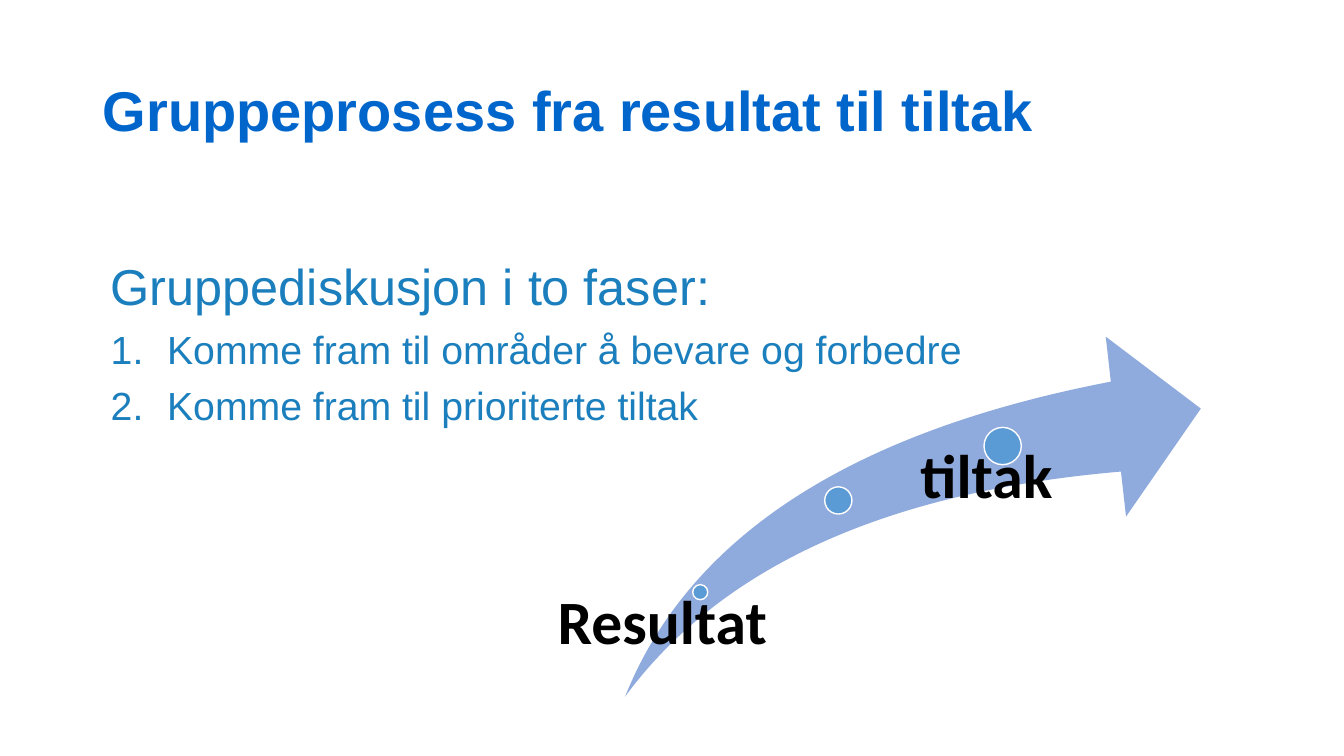
from lxml import etree
from pptx import Presentation
from pptx.dml.color import RGBColor
from pptx.enum.shapes import MSO_SHAPE
from pptx.enum.text import MSO_ANCHOR, PP_ALIGN
from pptx.oxml.ns import qn
from pptx.util import Inches, Pt

SWOOSH, OVAL = MSO_SHAPE.SWOOSH_ARROW, MSO_SHAPE.OVAL
LEFT = PP_ALIGN.LEFT
MIDDLE, TOP = MSO_ANCHOR.MIDDLE, MSO_ANCHOR.TOP
TITLE_ONLY = 5
COLORS = {
    "title": "0066CC",
    "body": "1C7FBD",
    "arrow": "8FAADC",
    "dot": "5B9BD5",
    "white": "FFFFFF",
    "label": "000000",
}


def write(para, text, *, size, color, font="Arial", bold=False, before=0):
    """Put one formatted span of text into a paragraph."""
    para.alignment = LEFT
    para.line_spacing = 0.9
    para.space_before = Pt(before)
    span = para.add_run()
    span.text = text
    span.font.name = font
    span.font.size = Pt(size)
    span.font.bold = bold
    span.font.color.rgb = RGBColor.from_string(COLORS[color])


class SlideBuilder:
    def __init__(self, deck):
        self.page = deck.slides.add_slide(deck.slide_layouts[TITLE_ONLY])
        self.swoosh_group = self.page.shapes.add_group_shape().shapes

    def title(self, text, *place):
        box = self.page.shapes.title
        box.left, box.top, box.width, box.height = map(Inches, place)
        box.text_frame.vertical_anchor = MIDDLE
        write(box.text_frame.paragraphs[0], text, size=40, color="title", bold=True)

    def text_frame(self, shapes, place):
        frame = shapes.add_textbox(*map(Inches, place)).text_frame
        frame.word_wrap = True
        frame.vertical_anchor = TOP
        return frame

    def numbered_list(self, heading, items, *place):
        frame = self.text_frame(self.page.shapes, place)
        write(frame.paragraphs[0], heading, size=36, color="body", before=10)
        for item in items:
            para = frame.add_paragraph()
            write(para, item, size=28, color="body", before=10)
            properties = para._p.get_or_add_pPr()
            properties.set("marL", str(Inches(0.56)))
            properties.set("indent", str(-Inches(0.56)))
            number = etree.SubElement(properties, qn("a:buAutoNum"))
            number.set("type", "arabicPeriod")

    def shape(self, kind, fill, *place, outline=None):
        shape = self.swoosh_group.add_shape(kind, *map(Inches, place))
        shape.shadow.inherit = False
        shape.fill.solid()
        shape.fill.fore_color.rgb = RGBColor.from_string(COLORS[fill])
        if outline:
            shape.line.color.rgb = RGBColor.from_string(COLORS[outline])
            shape.line.width = Pt(1)
        else:
            shape.line.fill.background()
        return shape

    def swoosh(self, *place):
        arrow = self.shape(SWOOSH, "arrow", *place)
        arrow.adjustments[0] = arrow.adjustments[1] = 0.25

    def dot(self, left, top, diameter):
        self.shape(OVAL, "dot", left, top, diameter, diameter, outline="white")

    def label(self, text, *place, inset):
        frame = self.text_frame(self.swoosh_group, place)
        frame.margin_left = Inches(inset)
        frame.margin_top = frame.margin_right = frame.margin_bottom = 0
        write(frame.paragraphs[0], text, size=44, color="label",
              font="Calibri", bold=True)


def main():
    deck = Presentation()
    deck.slide_width, deck.slide_height = Inches(13.33), Inches(7.5)
    builder = SlideBuilder(deck)

    # Title and the two phases
    builder.title("Gruppeprosess fra resultat til tiltak", 0.92, 0.4, 11.5, 1.45)
    builder.numbered_list(
        "Gruppediskusjon i to faser:",
        ["Komme fram til områder å bevare og forbedre",
         "Komme fram til prioriterte tiltak"],
        1, 2.55, 11.34, 3.75)

    # Rising arrow with growing dots
    builder.swoosh(6.2, 3.34, 5.71, 3.57)
    for left, top, diameter in [(6.87, 5.8, 0.15), (8.18, 4.83, 0.27),
                                (9.76, 4.24, 0.37)]:
        builder.dot(left, top, diameter)

    # Start and end of the process
    builder.label("Resultat", 5.45, 5.87, 4.33, 1.03, inset=0.08)
    builder.label("tiltak", 8.93, 4.42, 3.4, 2.48, inset=0.2)

    deck.save("out.pptx")


if __name__ == "__main__":
    main()
